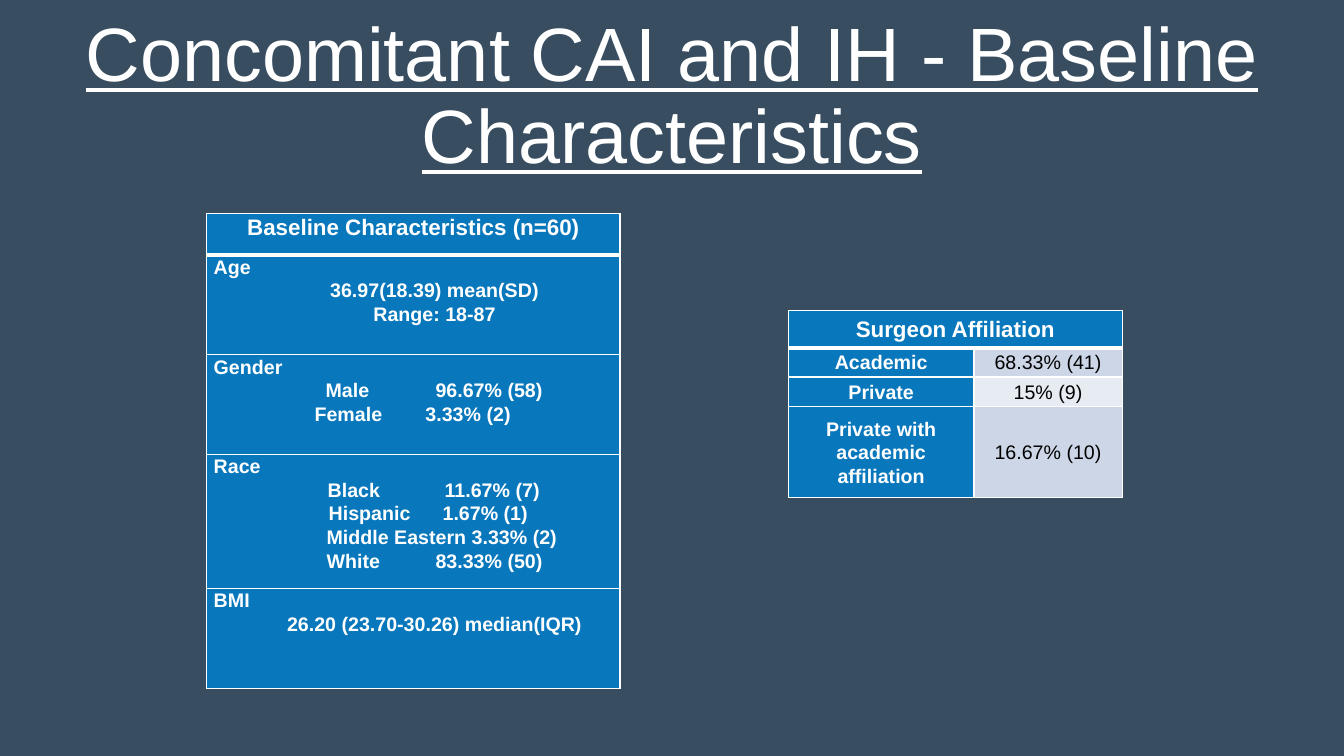
import pptx
import pptx.util
import pptx.dml.color
import pptx.enum.text
import pptx.oxml.ns
from lxml import etree

Inches, Pt = pptx.util.Inches, pptx.util.Pt
ALIGN = pptx.enum.text.PP_ALIGN
ANCHOR = pptx.enum.text.MSO_ANCHOR

# Content
TITLE = "Concomitant CAI and IH - Baseline Characteristics"
BASELINE_HEADING = "Baseline Characteristics (n=60)"
# A line is centred text, or text with its tab stops in inches
BASELINE = [
    ("Age", 0.99, ["36.97(18.39) mean(SD)", "Range: 18-87"]),
    ("Gender", 0.99, [("\tMale\t96.67% (58)", (1.11, 2.2)),
                      ("\tFemale\t3.33% (2)", (1.0, 2.1))]),
    ("Race", 1.33, [("\tBlack\t11.67% (7)", (1.13, 2.29)),
                    ("\tHispanic\t1.67% (1)", (1.14, 2.27)),
                    ("\tMiddle Eastern 3.33% (2)", (1.12,)),
                    ("\tWhite\t83.33% (50)", (1.12, 2.2))]),
    ("BMI", 0.99, ["26.20 (23.70-30.26) median(IQR)"]),
]
AFFILIATION_HEADING = "Surgeon Affiliation"
AFFILIATIONS = [
    ("Academic", "68.33% (41)", 0.29),
    ("Private", "15% (9)", 0.29),
    ("Private with academic affiliation", "16.67% (10)", 0.91),
]
COLORS = {"background": "384D60", "blue": "0877BC", "white": "FFFFFF",
          "black": "000000", "band_dark": "CCD6E7", "band_light": "E7ECF3"}
FONT = "Arial"
LINE_SPACING = 1.07
CENTRE_INDENT = 0.42


def rgb(name):
    return pptx.dml.color.RGBColor.from_string(COLORS[name])


def add_line(paragraph, text, size=14, color="white", bold=True,
             align=ALIGN.CENTER, indent=0, tabs=()):
    properties = paragraph._p.get_or_add_pPr()
    if indent:
        properties.set("marL", str(Inches(indent)))
    if tabs:
        stops = etree.SubElement(properties, pptx.oxml.ns.qn("a:tabLst"))
        for stop in tabs:
            etree.SubElement(stops, pptx.oxml.ns.qn("a:tab"),
                             pos=str(Inches(stop)), algn="l")
    paragraph.alignment = align
    paragraph.line_spacing = LINE_SPACING
    run = paragraph.add_run()
    run.text = text
    run.font.name, run.font.size, run.font.bold = FONT, Pt(size), bold
    run.font.color.rgb = rgb(color)


def add_grid(left, top, widths, heights):
    """Add a table with white borders, thicker under its first row."""
    grid = slide.shapes.add_table(
        len(heights), len(widths), Inches(left), Inches(top),
        Inches(sum(widths)), Inches(sum(heights))).table
    grid.horz_banding = False
    for column, width in zip(grid.columns, widths):
        column.width = Inches(width)
    for index, height in enumerate(heights):
        grid.rows[index].height = Inches(height)
        edges = {"L": 1, "R": 1, "T": 3 if index == 1 else 1,
                 "B": 3 if index == 0 else 1}
        for cell in grid.rows[index].cells:
            cell.margin_left = cell.margin_right = Inches(0.07)
            cell.margin_top = cell.margin_bottom = 0
            cell_properties = cell._tc.get_or_add_tcPr()
            for side, weight in edges.items():
                border = etree.SubElement(
                    cell_properties, pptx.oxml.ns.qn(f"a:ln{side}"), w=str(Pt(weight)))
                paint = etree.SubElement(border, pptx.oxml.ns.qn("a:solidFill"))
                etree.SubElement(paint, pptx.oxml.ns.qn("a:srgbClr"), val=COLORS["white"])
            fill_cell(cell, "blue")
    return grid


def fill_cell(cell, color):
    cell.fill.solid()
    cell.fill.fore_color.rgb = rgb(color)


# Slide
deck = pptx.Presentation()
deck.slide_width, deck.slide_height = Inches(13.33), Inches(7.5)
slide = deck.slides.add_slide(deck.slide_layouts[5])
slide.background.fill.solid()
slide.background.fill.fore_color.rgb = rgb("background")

# Title
title = slide.shapes.title
title.left, title.top = Inches(0), Inches(0.25)
title.width, title.height = Inches(13.33), Inches(1.45)
title.text_frame.word_wrap = True
title.text_frame.auto_size = pptx.enum.text.MSO_AUTO_SIZE.NONE
title.text_frame.vertical_anchor = ANCHOR.MIDDLE
heading = title.text_frame.paragraphs[0]
add_line(heading, TITLE, size=54, bold=False)
heading.line_spacing = 0.9
heading.runs[0].font.underline = True

# Baseline characteristics
baseline = add_grid(2.05, 2.12, [4.1], [0.41] + [height for _, height, _ in BASELINE])
add_line(baseline.cell(0, 0).text_frame.paragraphs[0], BASELINE_HEADING, size=16)
for row, (trait, _, lines) in enumerate(BASELINE, start=1):
    frame = baseline.cell(row, 0).text_frame
    add_line(frame.paragraphs[0], trait, align=ALIGN.LEFT)
    for line in lines:
        if isinstance(line, str):
            add_line(frame.add_paragraph(), line, indent=CENTRE_INDENT)
        else:
            add_line(frame.add_paragraph(), line[0], align=ALIGN.LEFT, tabs=line[1])

# Surgeon affiliation
affiliation = add_grid(7.82, 3.08, [1.84, 1.47],
                       [0.37] + [height for _, _, height in AFFILIATIONS])
affiliation.cell(0, 0).merge(affiliation.cell(0, 1))
add_line(affiliation.cell(0, 0).text_frame.paragraphs[0], AFFILIATION_HEADING, size=16)
for row, (group, share, _) in enumerate(AFFILIATIONS, start=1):
    group_cell, share_cell = affiliation.rows[row].cells
    add_line(group_cell.text_frame.paragraphs[0], group)
    add_line(share_cell.text_frame.paragraphs[0], share, color="black", bold=False)
    fill_cell(share_cell, "band_dark" if row % 2 else "band_light")
for cell in affiliation.iter_cells():
    cell.vertical_anchor = ANCHOR.MIDDLE

deck.save("out.pptx")
